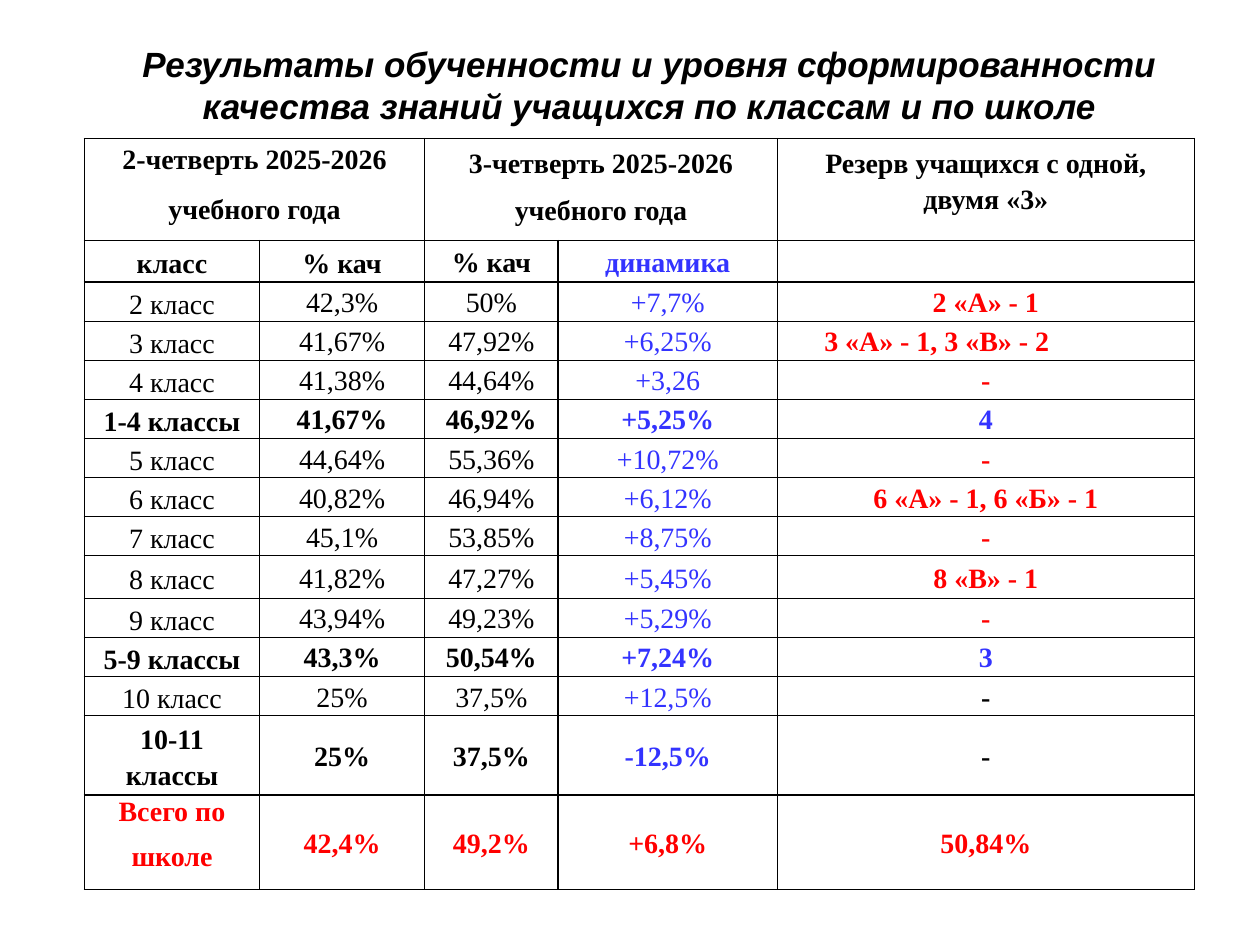
import pptx
import pptx.dml.color
import pptx.enum.text
import pptx.oxml
import pptx.oxml.ns
import pptx.util

BLACK, BLUE, RED = "000000", "3333FF", "FF0000"
SERIF, SANS = "Times New Roman", "Arial"

TITLE = ("Результаты обученности и уровня сформированности "
         "качества знаний учащихся по классам и по школе")
GROUPS = [
    (0, 1, ["2-четверть 2025-2026", "учебного года"], [1.15, 1.15], (0.06, 0.01, 0.06, 0)),
    (2, 3, ["3-четверть 2025-2026", "учебного года"], [1.15, 1.07], (0.08, 0.04, 0.08, 0.04)),
    (4, 4, ["Резерв учащихся с одной, двумя «3»"], [1.15], (0.08, 0.04, 0.08, 0.04)),
]
HEADINGS = ["класс", "% кач", "% кач", "динамика", ""]
RESULTS = [
    ("2 класс", "42,3%", "50%", "+7,7%", "2 «А» - 1"),
    ("3 класс", "41,67%", "47,92%", "+6,25%", "3 «А» - 1, 3 «В» - 2"),
    ("4 класс", "41,38%", "44,64%", "+3,26", "-"),
    ("1-4 классы", "41,67%", "46,92%", "+5,25%", "4"),
    ("5 класс", "44,64%", "55,36%", "+10,72%", "-"),
    ("6 класс", "40,82%", "46,94%", "+6,12%", "6 «А» - 1, 6 «Б» - 1"),
    ("7 класс", "45,1%", "53,85%", "+8,75%", "-"),
    ("8 класс", "41,82%", "47,27%", "+5,45%", "8 «В» - 1"),
    ("9 класс", "43,94%", "49,23%", "+5,29%", "-"),
    ("5-9 классы", "43,3%", "50,54%", "+7,24%", "3"),
    ("10 класс", "25%", "37,5%", "+12,5%", "-"),
    ("10-11 классы", "25%", "37,5%", "-12,5%", "-"),
]
TOTAL = (["Всего по", "школе"], "42,4%", "49,2%", "+6,8%", "50,84%")
RESERVE_COLORS = {"1-4 классы": BLUE, "5-9 классы": BLUE,
                  "10 класс": BLACK, "10-11 классы": BLACK}
COLS = [1.39, 1.31, 1.06, 1.74, 3.31]
ROW = 0.31
TALL_ROWS = {0: 0.81, 1: 0.33, 9: 0.34, 13: 0.63, 14: 0.75}
LAST = len(RESULTS) + 2


def inch(value):
    return pptx.util.Inches(value)


def rgb(value):
    return pptx.dml.color.RGBColor.from_string(value)


def write(tf, text, size=16, font=SERIF, color=BLACK, bold=False, italic=False,
          spacing=(1.0,), after=0):
    lines = [text] if isinstance(text, str) else text
    for i, line in enumerate(lines):
        p = tf.paragraphs[0] if i == 0 else tf.add_paragraph()
        p.alignment = pptx.enum.text.PP_ALIGN.CENTER
        p.line_spacing = spacing[min(i, len(spacing) - 1)]
        p.space_before, p.space_after = pptx.util.Pt(0), pptx.util.Pt(after)
        if line:
            r = p.add_run()
            r.text = line
            r.font.size, r.font.name = pptx.util.Pt(size), font
            r.font.bold, r.font.italic = bold, italic
            r.font.color.rgb = rgb(color)


def frame(cell):
    props = cell._tc.get_or_add_tcPr()
    for side in "LRTB":
        props.append(pptx.oxml.parse_xml(
            f'<a:ln{side} {pptx.oxml.ns.nsdecls("a")} w="12700"><a:solidFill>'
            f'<a:srgbClr val="{BLACK}"/></a:solidFill></a:ln{side}>'))
    cell.fill.background()


def fill_cell(cell, text, insets, middle=True, **fmt):
    cell.margin_left, cell.margin_top, cell.margin_right, cell.margin_bottom = map(inch, insets)
    anchor = pptx.enum.text.MSO_ANCHOR
    cell.vertical_anchor = anchor.MIDDLE if middle else anchor.TOP
    write(cell.text_frame, text, **fmt)


def add_title(s):
    sp = s.shapes.title
    sp.left, sp.top, sp.width, sp.height = map(inch, (0.51, 0.29, 9.29, 0.77))
    tf = sp.text_frame
    tf.word_wrap = True
    tf.vertical_anchor = pptx.enum.text.MSO_ANCHOR.TOP
    write(tf, TITLE, size=20, font=SANS, bold=True, italic=True)


def add_results(s):
    heights = [TALL_ROWS.get(i, ROW) for i in range(LAST + 1)]
    table = s.shapes.add_table(len(heights), len(COLS), inch(0.67), inch(1.1),
                               inch(sum(COLS)), inch(sum(heights))).table
    table.first_row = table.horz_banding = False
    for column, width in zip(table.columns, COLS):
        column.width = inch(width)
    for row, height in zip(table.rows, heights):
        row.height = inch(height)
    for cell in table.iter_cells():
        frame(cell)

    for first, last, text, spacing, insets in GROUPS:
        cell = table.cell(0, first)
        if last > first:
            cell.merge(table.cell(0, last))
        fill_cell(cell, text, insets, middle=False, bold=True, spacing=spacing, after=8)

    for c, text in enumerate(HEADINGS):
        fill_cell(table.cell(1, c), text, (0.06, 0.01, 0.06, 0), bold=True, after=8,
                  color=BLUE if c == 3 else BLACK, spacing=[1.15 if c < 2 else 1.07])

    for i, values in enumerate(RESULTS + [TOTAL], 2):
        total = i == LAST
        summary = total or "классы" in values[0]
        reserve = RED if total else RESERVE_COLORS.get(values[0], RED)
        colors = [RED] * 4 if total else [BLACK, BLACK, BLACK, BLUE]
        for c, (text, color) in enumerate(zip(values, colors + [reserve])):
            side = 0.06 if c == 0 or i == 2 else 0.01
            right = 0.79 if (i, c) == (3, 4) else side
            spacing = 1.07 if c else 1.0 if total else 1.15
            fill_cell(table.cell(i, c), text, (side, 0.01, right, 0),
                      middle=not (total and c == 0), color=color,
                      bold=summary or c == 4, spacing=[spacing],
                      after=8 if c in (0, 4) else 0)


def main():
    prs = pptx.Presentation()
    prs.slide_width, prs.slide_height = inch(10), inch(7.5)
    s = prs.slides.add_slide(prs.slide_layouts[5])
    add_title(s)
    add_results(s)
    prs.save("out.pptx")


if __name__ == "__main__":
    main()
